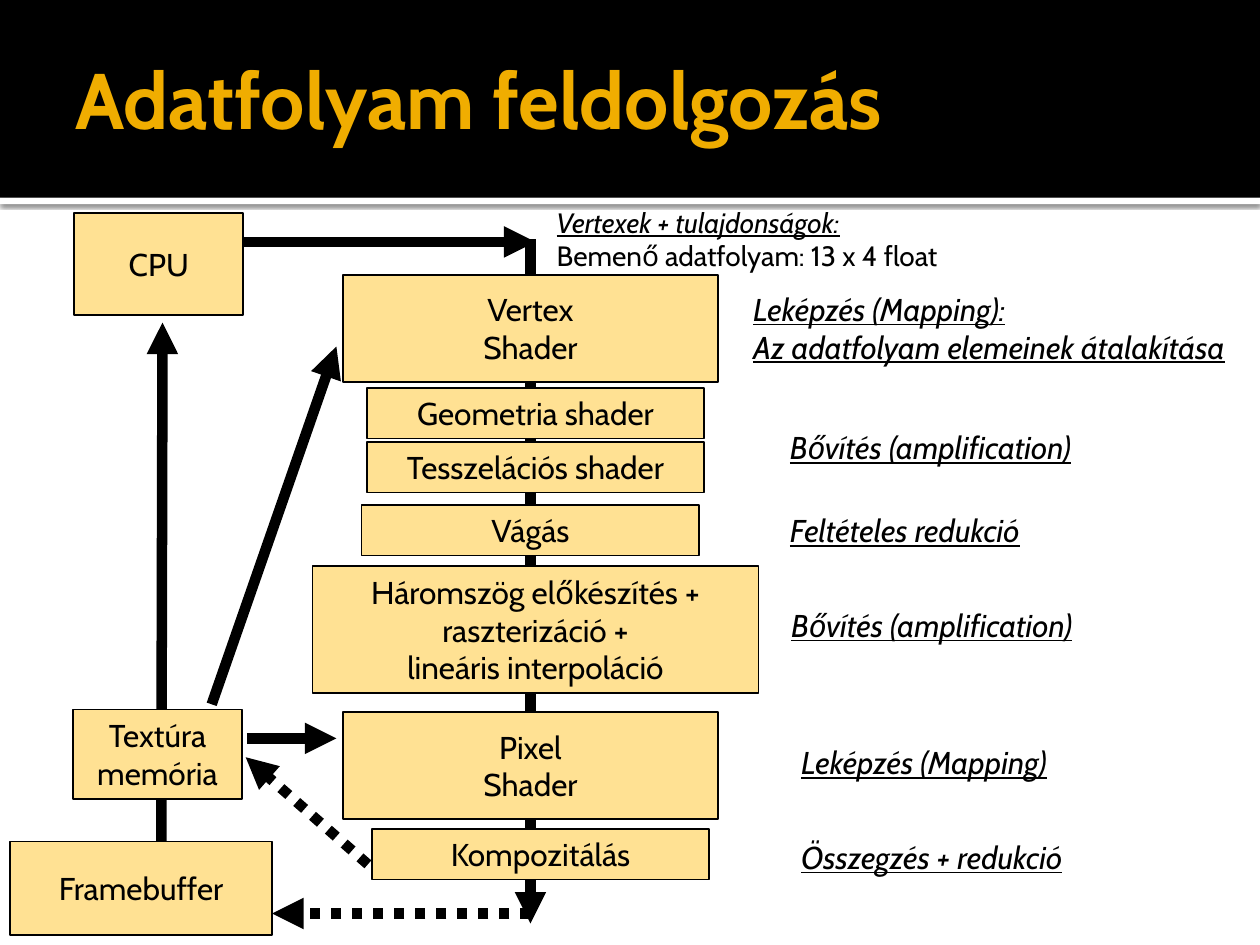
from dataclasses import dataclass

from lxml import etree
from pptx import Presentation
from pptx.dml.color import RGBColor
from pptx.enum import dml, shapes, text
from pptx.oxml import ns
from pptx.util import Inches, Pt


@dataclass(frozen=True)
class Theme:
    font: str = "Cabin"
    ink: RGBColor = RGBColor(0, 0, 0)
    paper: RGBColor = RGBColor(255, 255, 255)
    title: RGBColor = RGBColor.from_string("F0AD00")
    stage: RGBColor = RGBColor.from_string("FFE193")
    title_size: int = 45
    body_size: int = 18
    input_size: int = 16


theme = Theme()


def write(frame, content, size, color, align=text.PP_ALIGN.LEFT):
    frame.text = content
    for paragraph in frame.paragraphs:
        paragraph.alignment = align
        paragraph.font.name = theme.font
        paragraph.font.size = Pt(size)
        paragraph.font.color.rgb = color


def add_rect(left, top, width, height, fill):
    rect = slide.shapes.add_shape(
        shapes.MSO_SHAPE.RECTANGLE,
        Inches(left), Inches(top), Inches(width), Inches(height))
    rect.shadow.inherit = False
    rect.fill.solid()
    rect.fill.fore_color.rgb = fill
    rect.line.fill.background()
    return rect


deck = Presentation()
deck.slide_width, deck.slide_height = Inches(10), Inches(7.5)
slide = deck.slides.add_slide(deck.slide_layouts[5])

strip = add_rect(0, 1.57, 10, 0.05, theme.paper)
effects = strip._element.spPr.find(ns.qn("a:effectLst"))
shadow = etree.SubElement(effects, ns.qn("a:outerShdw"), blurRad=str(Pt(2.5)),
                          dist=str(Pt(0.8)), dir="5400000", rotWithShape="0")
shade = etree.SubElement(shadow, ns.qn("a:srgbClr"), val=str(theme.ink))
etree.SubElement(shade, ns.qn("a:alpha"), val="60000")
add_rect(0, 0, 10, 1.57, theme.ink)

title = slide.shapes.title
slide.shapes._spTree.append(title._element)
title.left, title.top = Inches(0.5), Inches(0.3)
title.width, title.height = Inches(9), Inches(0.95)
write(title.text_frame, "Adatfolyam feldolgozás", theme.title_size, theme.title)
title.text_frame.paragraphs[0].font.bold = True
title.text_frame.vertical_anchor = text.MSO_ANCHOR.MIDDLE
title.text_frame.margin_left = Inches(0.1)
title.text_frame.margin_right = Inches(0.05)

flows = [
    (1.28, 6.68, 1.29, 2.56, False),
    (4.21, 1.9, 4.21, 7.33, False),
    (1.68, 5.59, 2.67, 2.75, False),
    (4.21, 7.25, 2.16, 7.25, True),
    (1.93, 1.92, 4.25, 1.92, False),
    (2.92, 6.86, 1.95, 6.01, True),
    (1.96, 5.86, 2.67, 5.86, False),
]
for x1, y1, x2, y2, dotted in flows:
    flow = slide.shapes.add_connector(
        shapes.MSO_CONNECTOR.STRAIGHT,
        Inches(x1), Inches(y1), Inches(x2), Inches(y2))
    flow.line.width = Pt(6)
    flow.line.color.rgb = theme.ink
    if dotted:
        flow.line.dash_style = dml.MSO_LINE.ROUND_DOT
    etree.SubElement(flow.line._get_or_add_ln(), ns.qn("a:tailEnd"), type="triangle")
    etree.SubElement(flow._element.spPr, ns.qn("a:effectLst"))

stages = [
    ("CPU", 0.59, 1.69, 1.34, 0.81),
    ("Textúra\nmemória", 0.58, 5.63, 1.34, 0.71),
    ("Framebuffer", 0.08, 6.68, 2.08, 0.74),
    ("Vertex\nShader", 2.72, 2.18, 2.98, 0.85),
    ("Geometria shader", 2.91, 3.08, 2.68, 0.4),
    ("Tesszelációs shader", 2.91, 3.51, 2.68, 0.4),
    ("Vágás", 2.87, 4.01, 2.68, 0.4),
    ("Háromszög előkészítés + raszterizáció +\nlineáris interpoláció",
     2.48, 4.49, 3.54, 1.01),
    ("Pixel\nShader", 2.72, 5.65, 2.98, 0.85),
    ("Kompozitálás", 2.95, 6.58, 2.68, 0.4),
]
for label, left, top, width, height in stages:
    stage = add_rect(left, top, width, height, theme.stage)
    stage.line.color.rgb = theme.ink
    stage.line.width = Pt(1)
    write(stage.text_frame, label, theme.body_size, theme.ink, text.PP_ALIGN.CENTER)
    stage.text_frame.vertical_anchor = text.MSO_ANCHOR.MIDDLE

notes = [
    ("Vertexek + tulajdonságok:\nBemenő adatfolyam: 13 x 4 float",
     4.32, 1.58, 5.01, 0.64, theme.input_size, 1),
    ("Leképzés (Mapping):\nAz adatfolyam elemeinek átalakítása",
     5.88, 2.25, 3.96, 0.71, theme.body_size, 2),
    ("Bővítés (amplification)", 6.17, 3.35, 2.47, 0.4, theme.body_size, 1),
    ("Feltételes redukció", 6.17, 4.01, 2.08, 0.4, theme.body_size, 1),
    ("Bővítés (amplification)", 6.18, 4.76, 2.47, 0.4, theme.body_size, 1),
    ("Leképzés (Mapping)", 6.26, 5.85, 2.21, 0.4, theme.body_size, 1),
    ("Összegzés + redukció", 6.26, 6.6, 2.33, 0.4, theme.body_size, 1),
]
for content, left, top, width, height, size, emphasized in notes:
    note = slide.shapes.add_textbox(
        Inches(left), Inches(top), Inches(width), Inches(height))
    note.text_frame.word_wrap = False
    write(note.text_frame, content, size, theme.ink)
    for paragraph in note.text_frame.paragraphs[:emphasized]:
        paragraph.font.italic = True
        paragraph.font.underline = True

deck.save("out.pptx")
